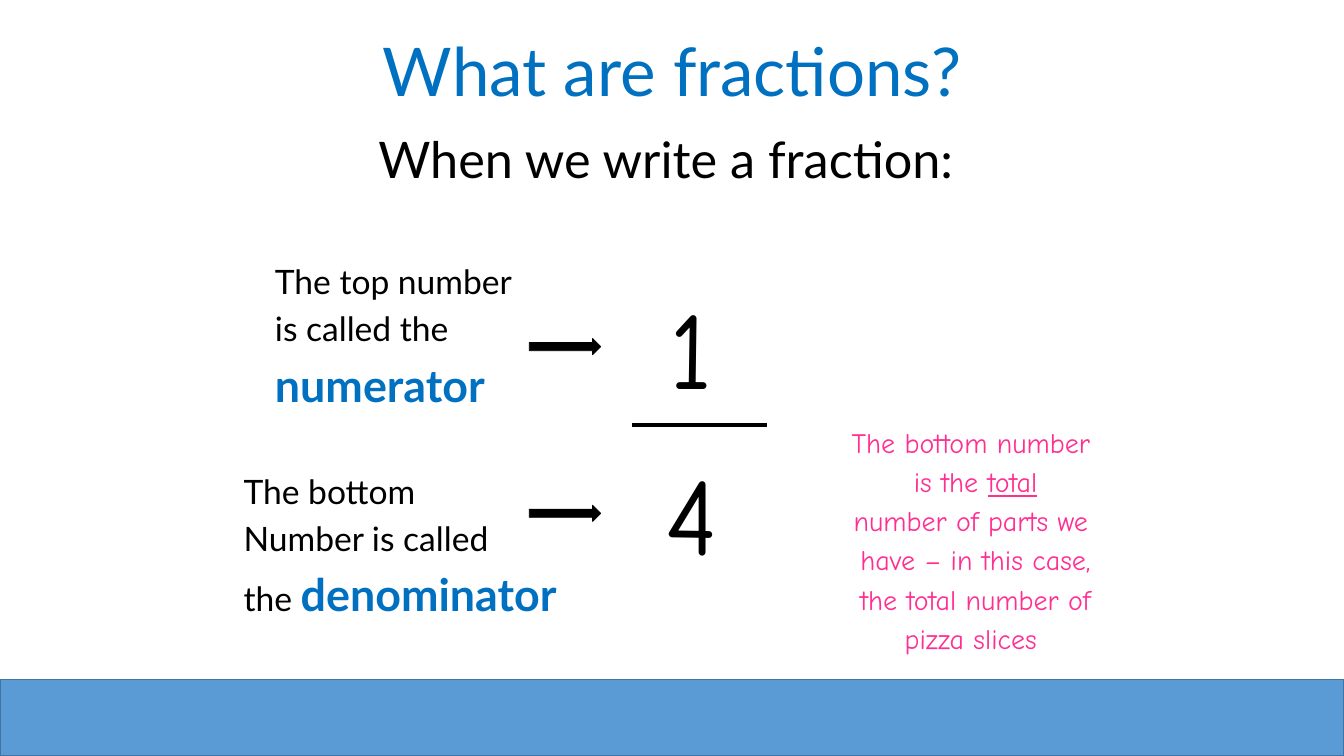
from lxml import etree
from pptx import Presentation, util as u
from pptx.dml.color import RGBColor
from pptx.enum import shapes, text
from pptx.oxml.ns import qn

BLACK, BLUE, PINK = "000000", "0070C0", "FF2F92"
BAR_FILL, BAR_LINE = "5B9BD5", "43739E"
LATO, COMIC = "Lato", "Comic Neue"
LEFT, CENTER = text.PP_ALIGN.LEFT, text.PP_ALIGN.CENTER


def color(value):
    return RGBColor.from_string(value)


def lengths(box):
    return [u.Cm(value) for value in box]


def run(words, size, fill=BLACK, font=LATO, bold=False, underline=False):
    return words, size, fill, font, bold, underline


def add_text(slide, box, lines, align=CENTER, anchor=text.MSO_ANCHOR.TOP,
             line_spacing=1.0, before=0.2):
    frame = slide.shapes.add_textbox(*lengths(box)).text_frame
    frame.word_wrap = True
    frame.vertical_anchor = anchor
    for index, runs in enumerate(lines):
        paragraph = frame.paragraphs[0] if index == 0 else frame.add_paragraph()
        paragraph.alignment = align
        paragraph.line_spacing = line_spacing
        paragraph.space_before = u.Pt(before * max(item[1] for item in runs))
        for words, size, fill, font, bold, underline in runs:
            part = paragraph.add_run()
            part.text = words
            part.font.size = u.Pt(size)
            part.font.name = font
            part.font.color.rgb = color(fill)
            part.font.bold = bold
            part.font.underline = underline


def add_block(slide, kind, box, fill, line, width):
    shape = slide.shapes.add_shape(kind, *lengths(box))
    shape.shadow.inherit = False
    shape.fill.solid()
    shape.fill.fore_color.rgb = color(fill)
    shape.line.color.rgb = color(line)
    shape.line.width = u.Pt(width)


def add_heading(slide, box):
    left, top, width, height = box
    add_text(slide, (left, top, width, 3.18), [[run("What are fractions?", 48, BLUE)]],
             anchor=text.MSO_ANCHOR.MIDDLE, line_spacing=0.9, before=0)
    add_text(slide, (left, top + 2.98, width, height - 2.98),
             [[run("When we write a fraction: ", 36)]], line_spacing=0.9, before=0.28)


def add_fraction(slide, box):
    left, top, width, height = box
    bar_top = top + 3.79
    add_text(slide, (left + 0.38, top, 6.6, 3.99), [[run("1", 78, font=COMIC)]])
    add_text(slide, (left, top + 4.2, width, height - 4.2), [[run("4", 78, font=COMIC)]])
    bar = slide.shapes.add_connector(
        shapes.MSO_CONNECTOR.STRAIGHT,
        *lengths((left + 2.19, bar_top, left + 5.59, bar_top)))
    bar.line.color.rgb = color(BLACK)
    bar.line.width = u.Pt(3)
    etree.SubElement(bar._element.spPr, qn("a:effectLst"))


def add_term(slide, box, lines, arrow_left, arrow_top):
    left, top = box[:2]
    add_text(slide, box, lines, LEFT)
    add_block(slide, shapes.MSO_SHAPE.RIGHT_ARROW,
              (left + arrow_left, top + arrow_top, 1.8, 0.41), BLACK, BLACK, 0.5)


def add_note(slide, box):
    lines = ["The bottom number ", "is the |total", "number of parts we ",
             "have – in this case,", "the total number of", "pizza slices "]
    add_text(slide, box, [
        [run(words, 20, PINK, COMIC, underline=index == 1)
         for index, words in enumerate(line.split("|"))]
        for line in lines])


def add_footer(slide, box):
    add_block(slide, shapes.MSO_SHAPE.RECTANGLE, box, BAR_FILL, BAR_LINE, 1)


def main():
    presentation = Presentation()
    presentation.slide_width, presentation.slide_height = u.Cm(33.87), u.Cm(19.05)
    slide = presentation.slides.add_slide(presentation.slide_layouts[6])
    add_heading(slide, (5.51, 0.3, 22.86, 9.25))
    add_fraction(slide, (13.74, 6.93, 7.39, 8.59))
    add_term(slide, (6.68, 6.45, 9.32, 4.17),
             [[run("The top number", 24)], [run("is called the", 24)],
              [run("numerator", 32, BLUE, bold=True)]], 6.66, 2.08)
    add_term(slide, (5.89, 11.73, 9.7, 5.38),
             [[run("The bottom", 24)], [run("Number is called", 24)],
              [run("the ", 24), run("denominator", 32, BLUE, bold=True)]], 7.45, 1)
    add_note(slide, (20.19, 10.59, 8.79, 6.25))
    add_footer(slide, (0, 17.12, 33.87, 1.93))
    presentation.save("out.pptx")


if __name__ == "__main__":
    main()
